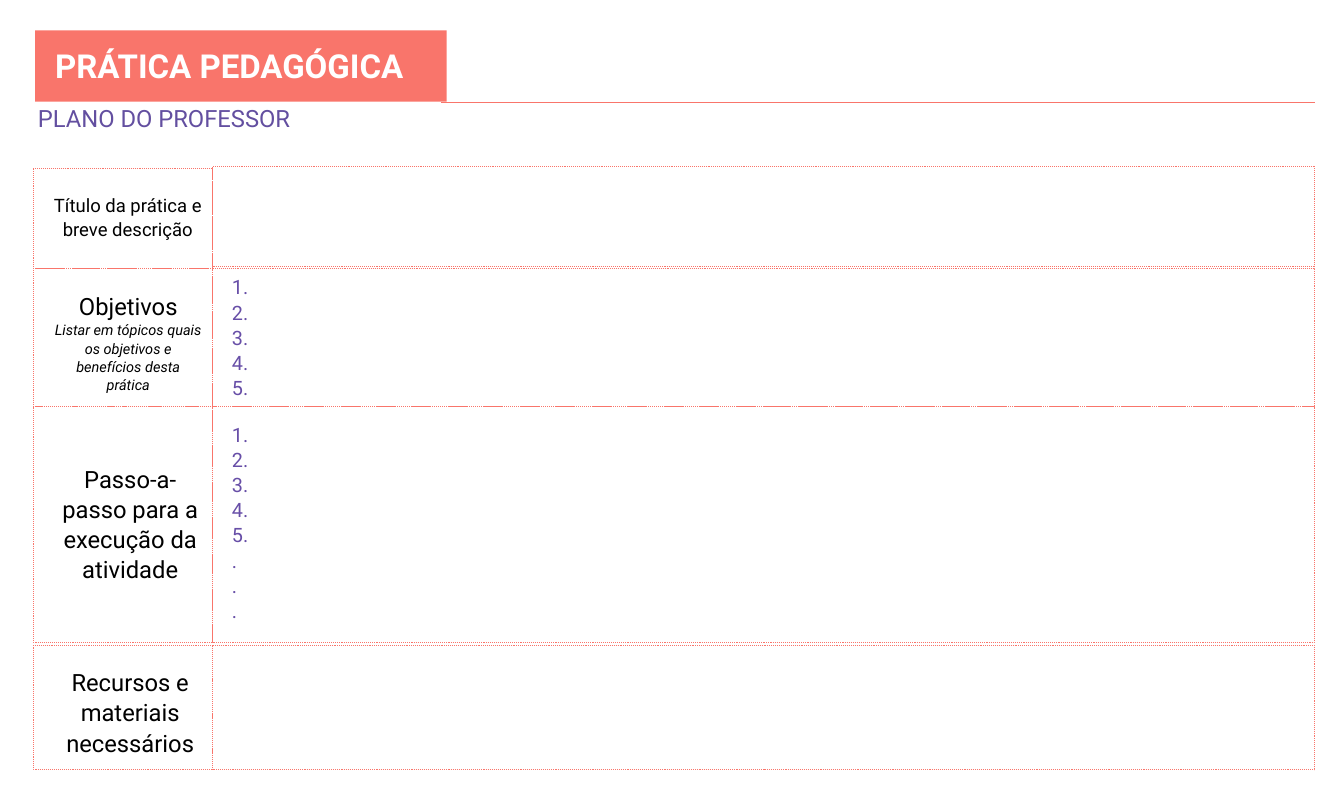
import pptx
import pptx.dml.color
import pptx.enum.dml
import pptx.enum.shapes
import pptx.enum.text
import pptx.oxml
import pptx.oxml.ns
import pptx.util
from pptx.util import Inches

COLORS = {"coral": "F9756B", "white": "FFFFFF", "black": "000000",
          "purple": "634FA0", "violet": "674EA7"}
FONT = "Roboto"
ALIGN = pptx.enum.text.PP_ALIGN

LABEL_X, LABEL_W = 0.35, 1.89
FIELD_X, FIELD_W = LABEL_X + LABEL_W, 11.59
# label top, field top, height
ROWS = [(1.77, 1.75, 1.06), (2.83, 2.83, 1.45), (4.28, 4.28, 2.48), (6.79, 6.79, 1.31)]

# box, then (text, size, italic) for each paragraph
LABELS = [
    ((0.25, 1.88, 2.05, 0.71), [("Título da prática e breve descrição", 14, False)]),
    ((0.43, 2.9, 1.7, 0.72), [
        ("Objetivos", 18, False),
        ("Listar em tópicos quais os objetivos e benefícios desta prática", 11, True)]),
    ((0.45, 4.72, 1.7, 1.31), [
        ("Passo-a-", 18, False), ("passo para a execução da atividade", 18, False)]),
    ((0.45, 6.86, 1.7, 0.39), [("Recursos e materiais necessários", 18, False)]),
]
NUMBERS = [f"{n}." for n in range(1, 6)]
LISTS = [((2.3, 2.73, 1.7, 0.72), NUMBERS), ((2.3, 4.28, 1.7, 0.72), NUMBERS + ["."] * 3)]


def rgb(name):
    return pptx.dml.color.RGBColor.from_string(COLORS[name])


def place(sp, box):
    sp.left, sp.top, sp.width, sp.height = [Inches(v) for v in box]


def set_frame(sp, top_inset):
    tf = sp.text_frame
    tf.word_wrap = True
    tf.auto_size = pptx.enum.text.MSO_AUTO_SIZE.NONE
    tf.vertical_anchor = pptx.enum.text.MSO_ANCHOR.TOP
    tf.margin_left = tf.margin_right = tf.margin_bottom = 0
    tf.margin_top = Inches(top_inset)
    return tf


def add_paragraph(tf, text, size, color, bold=False, italic=False,
                  align=ALIGN.LEFT, indent=0, spacing=1.0):
    """Write into the first paragraph while it is empty, else append one."""
    p = tf.paragraphs[0] if not tf.text else tf.add_paragraph()
    p.alignment, p.line_spacing = align, spacing
    p.space_before = p.space_after = pptx.util.Pt(0)
    pPr = p._p.get_or_add_pPr()
    pPr.set("marL", str(Inches(indent)))
    pPr.set("indent", "0")
    pPr.append(pptx.oxml.parse_xml(f"<a:buNone {pptx.oxml.ns.nsdecls('a')}/>"))
    r = p.add_run()
    r.text = text
    r.font.name, r.font.size = FONT, pptx.util.Pt(size)
    r.font.bold, r.font.italic = bold, italic
    r.font.color.rgb = rgb(color)


def add_rect(s, box):
    sp = s.shapes.add_shape(pptx.enum.shapes.MSO_SHAPE.RECTANGLE, *[Inches(v) for v in box])
    sp.shadow.inherit = False
    return sp


def add_cell(s, box):
    sp = add_rect(s, box)
    sp.fill.background()
    sp.line.color.rgb = rgb("coral")
    sp.line.width = pptx.util.Pt(0.75)
    sp.line.dash_style = pptx.enum.dml.MSO_LINE.ROUND_DOT


def add_textbox(s, box, top_inset):
    return set_frame(s.shapes.add_textbox(*[Inches(v) for v in box]), top_inset)


def add_header(s):
    band = add_rect(s, (0.37, 0.32, 4.33, 0.75))
    band.fill.solid()
    band.fill.fore_color.rgb = rgb("coral")
    band.line.fill.background()

    title = s.shapes.title
    place(title, (0.58, 0.47, 4.2, 0.69))
    add_paragraph(set_frame(title, 0.01), "PRÁTICA PEDAGÓGICA", 25, "white", bold=True)
    band.element.addnext(title.element)  # the title sits in front of its band

    rule = s.shapes.add_connector(pptx.enum.shapes.MSO_CONNECTOR.STRAIGHT,
                                  Inches(4.64), Inches(1.08), Inches(13.83), Inches(1.08))
    rule.line.color.rgb = rgb("coral")
    rule.line.width = pptx.util.Pt(0.75)
    rule.element.spPr.append(
        pptx.oxml.parse_xml(f"<a:effectLst {pptx.oxml.ns.nsdecls('a')}/>"))

    tf = add_textbox(s, (0.39, 1.08, 6.83, 0.69), 0.01)
    add_paragraph(tf, "PLANO DO PROFESSOR", 18, "purple", indent=0.01)


def add_label(s, box, paragraphs):
    tf = add_textbox(s, box, 0.15)
    for text, size, italic in paragraphs:
        add_paragraph(tf, text, size, "black", italic=italic,
                      align=ALIGN.CENTER, indent=0.14, spacing=1.06)


def fill_list(body, box, items):
    place(body, box)
    tf = set_frame(body, 0.15)
    for item in items:
        add_paragraph(tf, item, 15, "violet", indent=0.14, spacing=1.06)


def main():
    prs = pptx.Presentation()
    prs.slide_width, prs.slide_height = Inches(14.14), Inches(8.27)
    s = prs.slides.add_slide(prs.slide_layouts.get_by_name("Two Content"))

    for label_y, field_y, height in ROWS:
        add_cell(s, (LABEL_X, label_y, LABEL_W, height))
        add_cell(s, (FIELD_X, field_y, FIELD_W, height))
    add_header(s)
    for box, paragraphs in LABELS:
        add_label(s, box, paragraphs)
    for idx, (box, items) in enumerate(LISTS, start=1):
        fill_list(s.placeholders[idx], box, items)

    prs.save("out.pptx")


if __name__ == "__main__":
    main()
